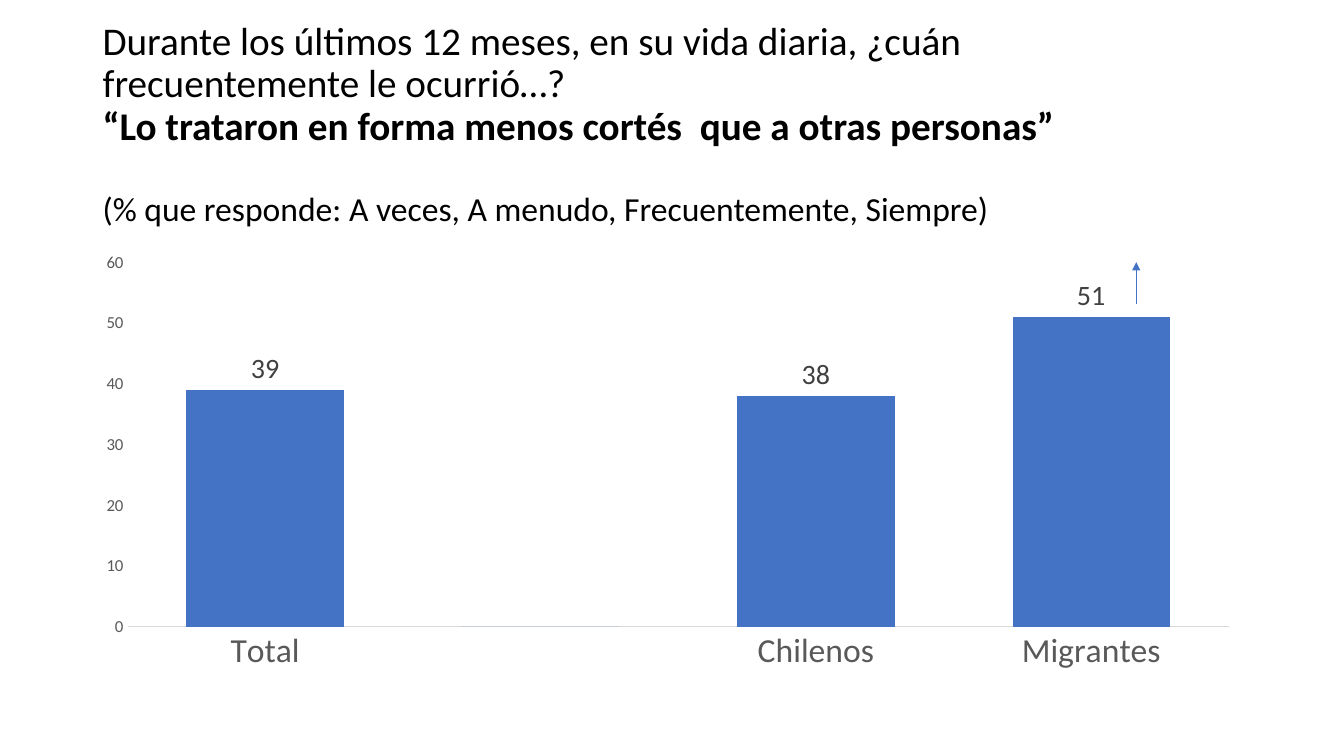
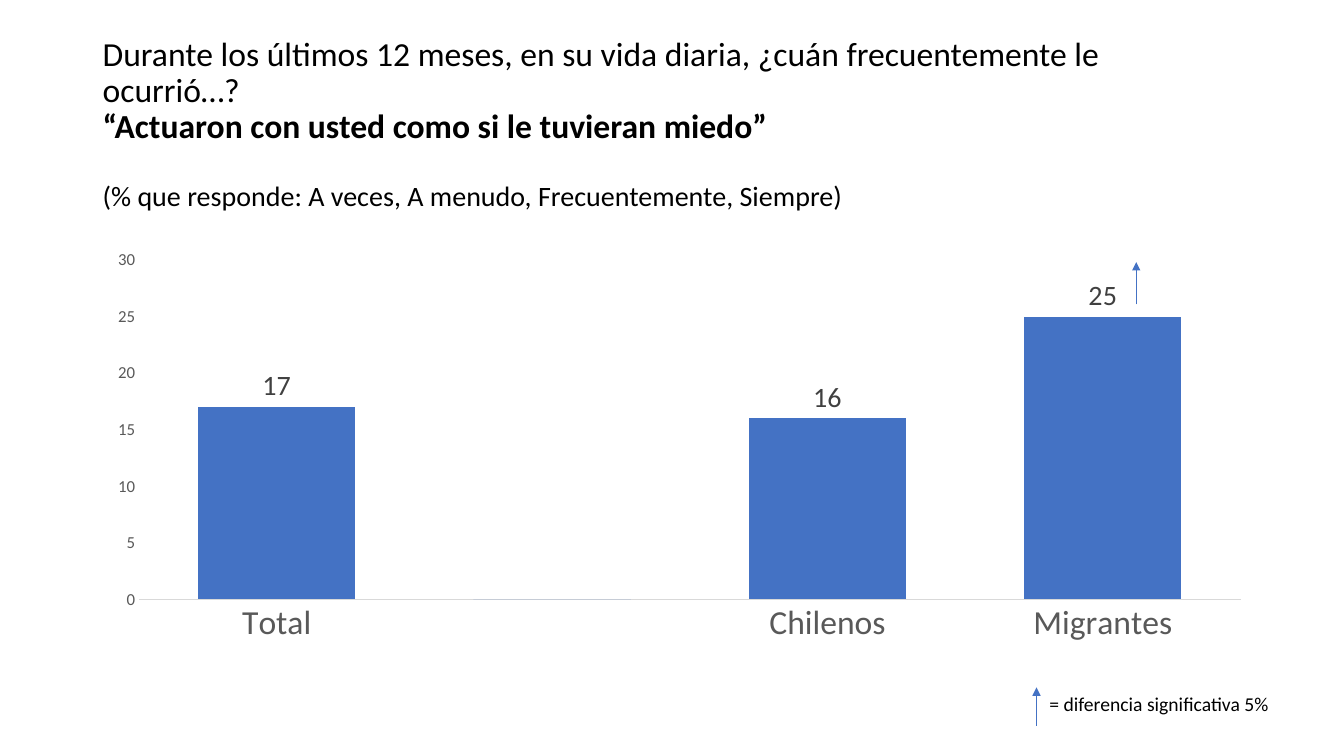
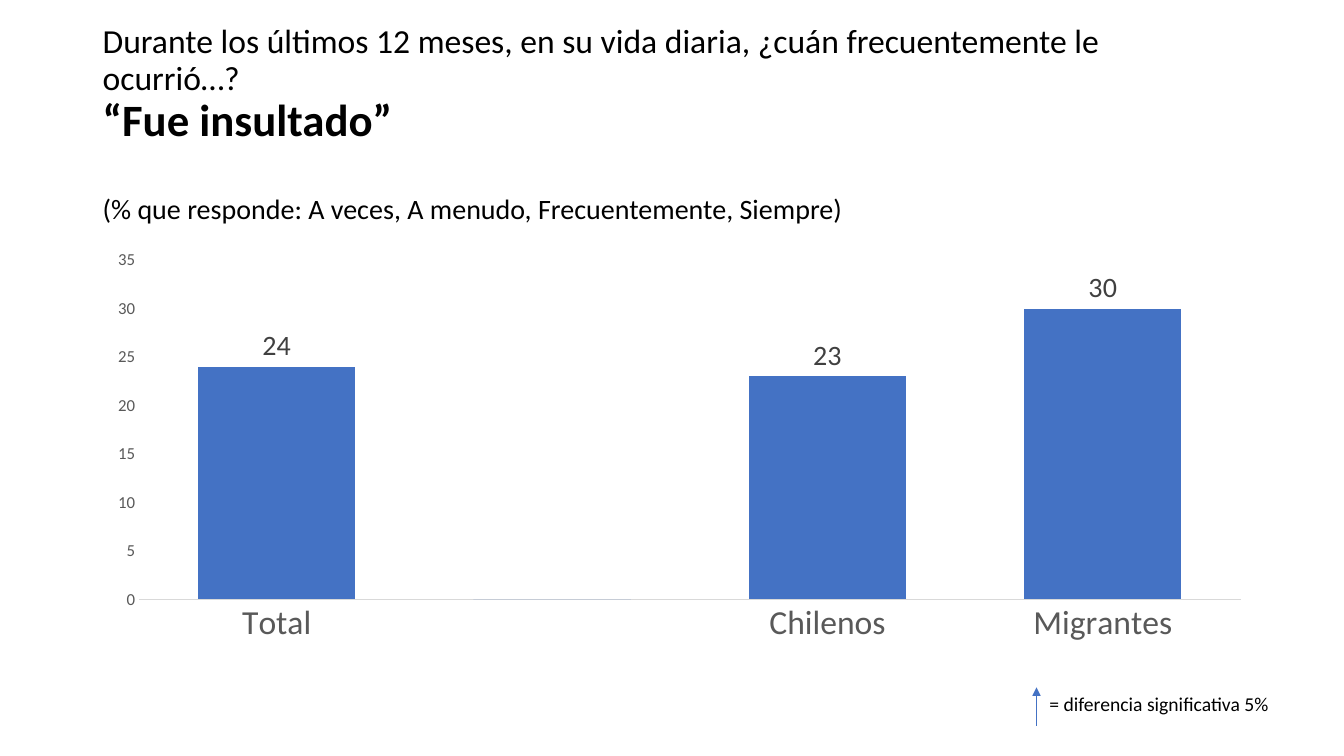
from lxml import etree
from pptx import Presentation
from pptx.chart.data import CategoryChartData
from pptx.dml.color import RGBColor
from pptx.enum.chart import XL_CHART_TYPE, XL_LABEL_POSITION, XL_TICK_MARK
from pptx.enum.shapes import MSO_CONNECTOR
from pptx.enum.text import MSO_ANCHOR, MSO_AUTO_SIZE
from pptx.oxml.ns import qn
from pptx.util import Inches, Pt

COLUMN = XL_CHART_TYPE.COLUMN_CLUSTERED
OUTSIDE = XL_LABEL_POSITION.OUTSIDE_END
NO_TICK = XL_TICK_MARK.NONE
STRAIGHT = MSO_CONNECTOR.STRAIGHT
MIDDLE = MSO_ANCHOR.MIDDLE
FIT = MSO_AUTO_SIZE.SHAPE_TO_FIT_TEXT

WIDTH, HEIGHT = Inches(13.33), Inches(7.5)
FONT = "Calibri"
COLORS = {"text": "000000", "bar": "4472C4", "axis": "595959",
          "label": "404040", "rule": "D9D9D9"}
LINE_SPACING = 0.9
BLANK_LINE = 1.1

QUESTION = ("Durante los últimos 12 meses, en su vida diaria, "
            "¿cuán frecuentemente le ocurrió…?")
NOTE = "(% que responde: A veces, A menudo, Frecuentemente, Siempre)"
LEGEND = "= diferencia significativa 5%"
GROUPS = ["Total", " ", "Chilenos", "Migrantes"]

LEFT, TITLE_TOP, TITLE_H = 6.9, 2.8, 27.47
CHART_TOP, CHART_W = 30.27, 86.27
LEGEND_BOX = (77.12, 90.93, 18.23, 5.07)

SLIDES = [
    {"item": "“Lo trataron en forma menos cortés  que a otras personas”",
     "sizes": (28, 28, 24), "title_w": 84.92, "chart_h": 63.47,
     "plot": (0.03, 0.07, 0.95, 0.76), "values": (39, 0, 38, 51),
     "top": 60, "step": 10, "higher": True, "legend": False},
    {"item": "“Actuaron con usted como si le tuvieran miedo”",
     "sizes": (24, 24, 20), "title_w": 83.42, "chart_h": 59.07,
     "plot": (0.04, 0.07, 0.95, 0.76), "values": (17, 0, 16, 25),
     "top": 30, "step": 5, "higher": True, "legend": True},
    {"item": "“Fue insultado”",
     "sizes": (24, 32, 20), "title_w": 83.42, "chart_h": 59.07,
     "plot": (0.04, 0.07, 0.95, 0.76), "values": (24, 0, 23, 30),
     "top": 35, "step": 5, "higher": False, "legend": True},
]


def color(name):
    """Return a named colour."""
    return RGBColor.from_string(COLORS[name])


def emu(x, y, w, h):
    """Turn percentages of the slide into lengths."""
    return [int(v * side / 100)
            for v, side in zip((x, y, w, h), (WIDTH, HEIGHT) * 2)]


def style(font, size, name, bold=False):
    """Set face, size, colour and weight of a font."""
    font.name, font.size, font.bold = FONT, Pt(size), bold
    font.color.rgb = color(name)


def add_title(slide, box, item, sizes):
    """Write the question, the item asked about and the answer note."""
    tf = slide.shapes.add_textbox(*emu(*box)).text_frame
    tf.word_wrap, tf.vertical_anchor = True, MIDDLE
    tf.text = "\n".join((QUESTION, item, NOTE))
    for p, size, bold in zip(tf.paragraphs, sizes, (False, True, False)):
        p.line_spacing = LINE_SPACING
        style(p.runs[0].font, size, "text", bold)
    tf.paragraphs[-1].space_before = Pt(round(sizes[1] * BLANK_LINE))


def add_up_arrow(slide, x, top, height):
    """Draw a thin arrow that points up."""
    x, top, _, height = emu(x, top, 0, height)
    line = slide.shapes.add_connector(STRAIGHT, x, top + height, x, top)
    line.line.color.rgb = color("bar")
    line.line.width = Pt(0.5)
    ln = line.line._get_or_add_ln()
    etree.SubElement(ln, qn("a:tailEnd"), type="triangle")
    etree.SubElement(line._element.spPr, qn("a:effectLst"))


def set_plot_area(chart, shares):
    """Fix the inner plot area as shares of the chart."""
    area = chart._chartSpace.chart.plotArea
    for old in area.findall(qn("c:layout")):
        area.remove(old)
    layout = etree.Element(qn("c:layout"))
    area.insert(0, layout)
    manual = etree.SubElement(layout, qn("c:manualLayout"))
    settings = [("layoutTarget", "inner"), ("xMode", "edge"), ("yMode", "edge")]
    settings += zip("xywh", map(str, shares))
    for tag, val in settings:
        etree.SubElement(manual, qn("c:" + tag), val=val)


def add_bars(slide, box, plot_area, values, top, step, higher):
    """Chart the groups and mark the last one if it is significantly higher."""
    data = CategoryChartData()
    data.categories = GROUPS
    data.add_series("Series 1", values)
    chart = slide.shapes.add_chart(COLUMN, *emu(*box), data).chart
    chart.has_title = chart.has_legend = False
    style(chart.font, 10, "text")
    set_plot_area(chart, plot_area)

    for axis, size in ((chart.category_axis, 24), (chart.value_axis, 12)):
        axis.has_major_gridlines = False
        axis.major_tick_mark = axis.minor_tick_mark = NO_TICK
        style(axis.tick_labels.font, size, "axis")
    rule = chart.category_axis.format.line
    rule.color.rgb, rule.width = color("rule"), Pt(0.75)
    scale = chart.value_axis
    scale.format.line.fill.background()
    scale.minimum_scale, scale.maximum_scale = 0, top
    scale.major_unit = step

    plot = chart.plots[0]
    plot.gap_width, plot.vary_by_categories = 75, False
    fill = plot.series[0].format.fill
    fill.solid()
    fill.fore_color.rgb = color("bar")
    plot.has_data_labels = True
    labels = plot.data_labels
    labels.show_value, labels.position = True, OUTSIDE
    labels.number_format, labels.number_format_is_linked = "0;;;", False
    style(labels.font, 20, "label")

    if higher:
        x, y, w, _ = box
        add_up_arrow(slide, x + w * 0.9, y + 4.4, 5.6)


def add_legend(slide, box):
    """Explain the arrow at the foot of the slide."""
    x, y, w, h = box
    add_up_arrow(slide, x, y, h)
    tf = slide.shapes.add_textbox(*emu(x + 0.23, y, w - 0.23, 4.53)).text_frame
    tf.word_wrap, tf.auto_size = False, FIT
    tf.text = LEGEND
    style(tf.paragraphs[0].runs[0].font, 14, "text")


def add_question_slide(prs, q):
    """Build the slide of one survey question."""
    slide = prs.slides.add_slide(prs.slide_layouts[6])
    add_title(slide, (LEFT, TITLE_TOP, q["title_w"], TITLE_H),
              q["item"], q["sizes"])
    add_bars(slide, (LEFT, CHART_TOP, CHART_W, q["chart_h"]), q["plot"],
             q["values"], q["top"], q["step"], q["higher"])
    if q["legend"]:
        add_legend(slide, LEGEND_BOX)


def main():
    """Build and save the presentation."""
    prs = Presentation()
    prs.slide_width, prs.slide_height = WIDTH, HEIGHT
    for q in SLIDES:
        add_question_slide(prs, q)
    prs.save("out.pptx")


if __name__ == "__main__":
    main()
